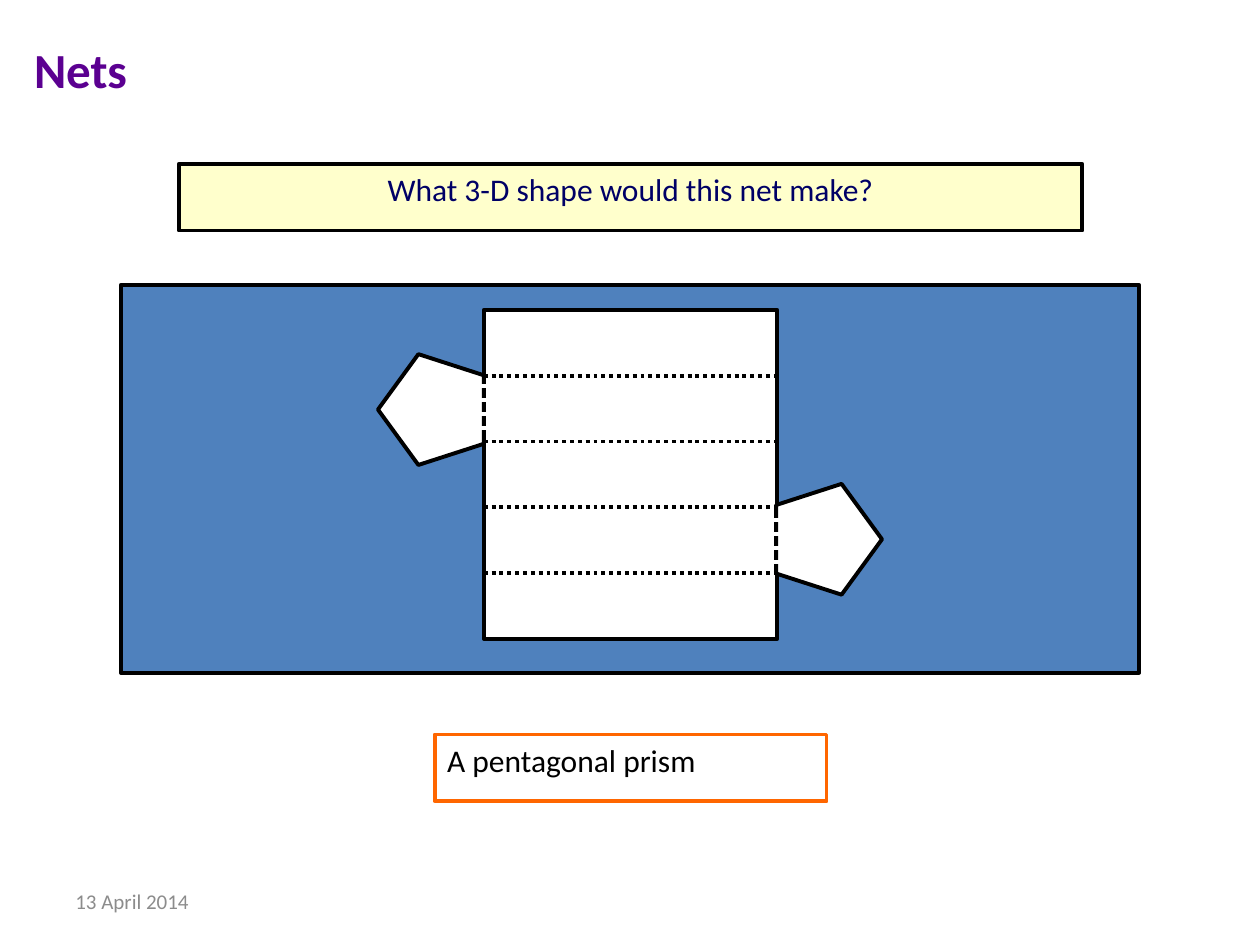
"""Build a slide that asks which solid a net of a pentagonal prism makes."""
from lxml.etree import SubElement
from pptx import Presentation
from pptx.dml.color import RGBColor
from pptx.enum.dml import MSO_LINE
from pptx.enum.shapes import MSO_CONNECTOR, MSO_SHAPE
from pptx.enum.text import MSO_ANCHOR, PP_ALIGN
from pptx.oxml.ns import qn
from pptx.util import Inches, Pt

CELL = Inches(0.1)
COLUMNS, ROWS = 100, 75
BLACK = RGBColor(0x00, 0x00, 0x00)
WHITE = RGBColor(0xFF, 0xFF, 0xFF)
BLUE = RGBColor(0x4F, 0x81, 0xBD)
CREAM = RGBColor(0xFF, 0xFF, 0xCC)
ORANGE = RGBColor(0xFF, 0x66, 0x00)
NAVY = RGBColor(0x00, 0x00, 0x66)
PURPLE = RGBColor(0x5B, 0x00, 0x91)
GREY = RGBColor(0x8C, 0x8C, 0x8C)

FACES = 5
NET_LEFT, NET_TOP, NET_WIDTH, FACE_HEIGHT = 38.4, 24.6, 23.3, 5.22
CUTS, CUT_GAP, CUT_WIDTH = 4, 1.11, 1.8


def cells(*counts):
    """Turn counts of columns or rows into lengths."""
    return [round(count * CELL) for count in counts]


def apply_format(target, values):
    """Set each attribute named in a dict of format values."""
    for name, value in values.items():
        setattr(target, name, value)


def write(holder, text, size, color, bold=False, align=PP_ALIGN.LEFT, anchor=MSO_ANCHOR.TOP):
    """Write one formatted paragraph into a shape."""
    frame = holder.text_frame
    apply_format(frame, {"word_wrap": True, "vertical_anchor": anchor})
    paragraph = frame.paragraphs[0]
    paragraph.alignment = align
    run = paragraph.add_run()
    run.text = text
    apply_format(run.font, {"name": "Calibri", "size": Pt(size), "bold": bold})
    run.font.color.rgb = color


def draw_outline(line, color):
    """Give a border or line its colour and the common width."""
    line.color.rgb = color
    line.width = Pt(2.25)


def add_panel(shapes, area, fill=None, border=BLACK, kind=MSO_SHAPE.RECTANGLE, turn=0):
    """Add a bordered shape, filled or clear."""
    panel = shapes.add_shape(kind, *cells(*area))
    panel.shadow.inherit = False
    panel.rotation = turn
    if fill is None:
        panel.fill.background()
    else:
        panel.fill.solid()
        panel.fill.fore_color.rgb = fill
    draw_outline(panel.line, border)
    return panel


def add_level_line(shapes, left, width, row, color, dash=None):
    """Add a horizontal line without a shadow."""
    level = shapes.add_connector(MSO_CONNECTOR.STRAIGHT, *cells(left, row, left + width, row))
    draw_outline(level.line, color)
    if dash is not None:
        level.line.dash_style = dash
    SubElement(level._element.spPr, qn("a:effectLst"))


def add_net(shapes):
    """Draw five faces with fold lines and two pentagonal ends."""
    net = shapes.add_group_shape().shapes
    add_panel(net, (NET_LEFT, NET_TOP, NET_WIDTH, FACES * FACE_HEIGHT), WHITE)
    ends = [(29.8, 28.3, 270, 37.7, 30.65), (61.4, 38.6, 90, 60.9, 41.3)]
    for left, top, turn, _, _ in ends:
        add_panel(net, (left, top, 8.8, 8.4), WHITE, kind=MSO_SHAPE.REGULAR_PENTAGON, turn=turn)
    for fold in range(1, FACES):
        add_level_line(net, NET_LEFT, NET_WIDTH - 0.1, NET_TOP + fold * FACE_HEIGHT,
                       BLACK, MSO_LINE.ROUND_DOT)
    for _, _, _, cut_left, first_cut in ends:
        for cut in range(CUTS):
            add_level_line(net, cut_left, CUT_WIDTH, first_cut + cut * CUT_GAP, WHITE)


def main():
    """Assemble and save the slide."""
    deck = Presentation()
    apply_format(deck, {"slide_width": COLUMNS * CELL, "slide_height": ROWS * CELL})
    slide = deck.slides.add_slide(deck.slide_layouts[5])
    shapes = slide.shapes

    title = shapes.title
    apply_format(title, dict(zip(("left", "top", "width", "height"), cells(1.7, 1.7, 78.3, 7.5))))
    write(title, "Nets", 28, PURPLE, bold=True, anchor=MSO_ANCHOR.MIDDLE)

    add_panel(shapes, (9.6, 22.6, 80.8, 30.8), BLUE)
    question = add_panel(shapes, (14.2, 13, 71.7, 5.3), CREAM)
    write(question, "What 3-D shape would this net make?", 18, NAVY, align=PP_ALIGN.CENTER)
    answer = add_panel(shapes, (34.5, 58.3, 31.1, 5.3), border=ORANGE)
    write(answer, "A pentagonal prism", 18, BLACK)
    add_net(shapes)
    date = shapes.add_textbox(*cells(5, 69.5, 23.3, 4))
    write(date, "13 April 2014", 12, GREY, anchor=MSO_ANCHOR.MIDDLE)
    deck.save("out.pptx")


if __name__ == "__main__":
    main()
